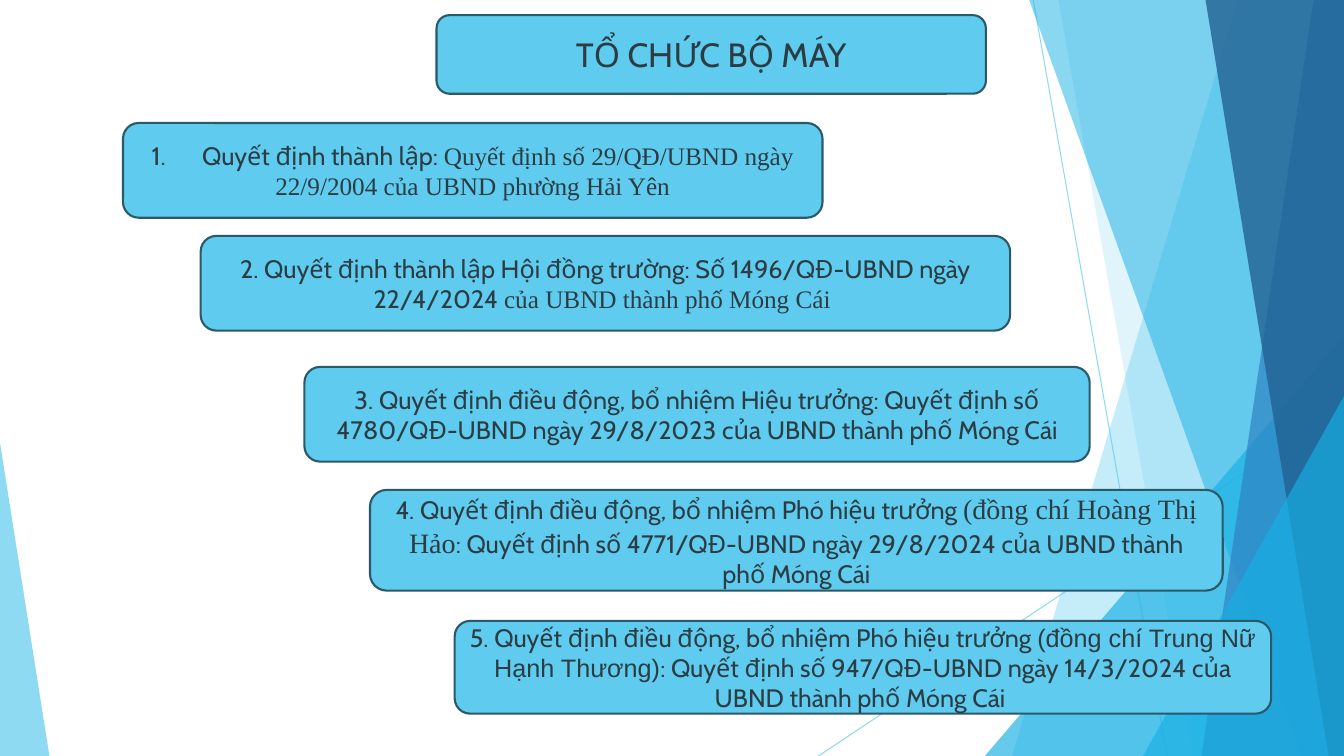
from dataclasses import dataclass
from typing import Any, Optional, Union

from lxml import etree
from pptx import Presentation
from pptx.dml.color import RGBColor
from pptx.enum.shapes import MSO_CONNECTOR, MSO_SHAPE
from pptx.enum.text import MSO_ANCHOR, PP_ALIGN
from pptx.oxml.ns import qn
from pptx.util import Emu, Inches, Pt

STRAIGHT = MSO_CONNECTOR.STRAIGHT
TRIANGLE = MSO_SHAPE.ISOSCELES_TRIANGLE
ROUNDED = MSO_SHAPE.ROUNDED_RECTANGLE
MIDDLE = MSO_ANCHOR.MIDDLE
CENTER = PP_ALIGN.CENTER

WIDTH, HEIGHT = Inches(13.333), Inches(7.5)
TAB_SHARE = 3.75
COLORS = {
    "sky": "5FCBEF",
    "cyan": "17B0E4",
    "blue": "2E83C3",
    "navy": "226292",
    "border": "2A5969",
    "text": "2C3C43",
}
BODY, SERIF, SANS = "Cabin", "Times New Roman", "Arial"
FRAME_FORMAT = {"word_wrap": True, "vertical_anchor": MIDDLE}


@dataclass(frozen=True)
class Ray:
    x1: float
    y1: float
    x2: float
    y2: float


@dataclass(frozen=True)
class Pane:
    top_left: float
    bottom_left: float
    color: str
    opacity: int


@dataclass(frozen=True)
class Wedge:
    left: float
    top: float
    right: float
    peak: float
    color: str
    opacity: int


@dataclass(frozen=True)
class Phrase:
    text: str
    font: str = BODY
    size: int = 18


@dataclass(frozen=True)
class Decision:
    left: float
    top: float
    width: float
    height: float
    phrases: tuple[Phrase, ...]


RAYS = [Ray(76.88, 0, 86.85, 100), Ray(100, 53.73, 60.9, 100)]

FACETS: list[Union[Pane, Wedge]] = [
    Pane(92.1, 75.3, "sky", 36),
    Pane(78.75, 88.73, "sky", 20),
    Wedge(73.28, 44.4, 100, 1, "cyan", 66),
    Pane(76.58, 96.83, "cyan", 50),
    Pane(97.73, 89.4, "blue", 70),
    Pane(89.7, 98.85, "navy", 80),
    Wedge(85.05, 52.4, 100, 1, "cyan", 66),
    Wedge(0, 58.53, 3.68, 0, "sky", 70),
]

DECISIONS = [
    Decision(32.48, 2, 40.88, 10.4, (Phrase("TỔ CHỨC BỘ MÁY", size=24),)),
    Decision(9.15, 16.27, 52.05, 12.53, (
        Phrase("1. \tQuyết định thành lập: "),
        Phrase("Quyết định số 29/QĐ/UBND ngày 22/9/2004 của UBND phường Hải Yên", SERIF),
    )),
    Decision(14.93, 31.2, 60.23, 12.53, (
        Phrase("2. Quyết định thành lập Hội đồng trường: Số 1496/QĐ-UBND ngày 22/4/2024 "),
        Phrase("của UBND thành phố Móng Cái ", SERIF),
    )),
    Decision(22.65, 48.53, 58.43, 12.53, (
        Phrase("3. Quyết định điều động, bổ nhiệm Hiệu trưởng: Quyết định số "
               "4780/QĐ-UBND ngày 29/8/2023 của UBND thành phố Móng Cái"),
    )),
    Decision(27.53, 64.8, 63.45, 13.33, (
        Phrase("4. Quyết định điều động, bổ nhiệm Phó hiệu trưởng "),
        Phrase("(đồng chí Hoàng Thị Hảo", SERIF, 20),
        Phrase(": Quyết định số 4771/QĐ-UBND ngày 29/8/2024 của UBND thành phố Móng Cái"),
    )),
    Decision(33.83, 82.13, 60.75, 12.27, (
        Phrase("5. Quyết định điều động, bổ nhiệm Phó hiệu trưởng "),
        Phrase("(đồng chí Trung Nữ Hạnh Thương)", SANS),
        Phrase(": Quyết định số 947/QĐ-UBND ngày 14/3/2024 của UBND thành phố Móng Cái "),
    )),
]


def across(share: float) -> Emu:
    return Emu(round(WIDTH * share / 100))


def down(share: float) -> Emu:
    return Emu(round(HEIGHT * share / 100))


def rgb(color: str) -> RGBColor:
    return RGBColor.from_string(COLORS[color])


def apply(target: Any, values: dict[str, Any]) -> None:
    for key, value in values.items():
        setattr(target, key, value)


def paint(fill: Any, color: str, opacity: Optional[int] = None) -> None:
    fill.solid()
    fill.fore_color.rgb = rgb(color)
    if opacity is not None:
        for tint in fill._xPr.iter(qn("a:srgbClr")):
            etree.SubElement(tint, qn("a:alpha")).set("val", str(opacity * 1000))


def draw_ray(shapes: Any, ray: Ray) -> None:
    line = shapes.add_connector(
        STRAIGHT, across(ray.x1), down(ray.y1), across(ray.x2), down(ray.y2))
    line.line.width = Pt(0.75)
    paint(line.line.fill, "sky", 70)
    etree.SubElement(line._element.spPr, qn("a:effectLst"))


def draw_facet(shapes: Any, facet: Union[Pane, Wedge]) -> None:
    if isinstance(facet, Pane):
        outline = shapes.build_freeform(across(facet.top_left), 0)
        outline.add_line_segments(
            [(WIDTH, 0), (WIDTH, HEIGHT), (across(facet.bottom_left), HEIGHT)])
        shard = outline.convert_to_shape()
    else:
        shard = shapes.add_shape(
            TRIANGLE, across(facet.left), down(facet.top),
            across(facet.right - facet.left), down(100 - facet.top))
        shard.adjustments[0] = facet.peak
    paint(shard.fill, facet.color, facet.opacity)
    shard.line.fill.background()
    shard.shadow.inherit = False


def draw_decision(shapes: Any, decision: Decision) -> None:
    card = shapes.add_shape(
        ROUNDED, across(decision.left), down(decision.top),
        across(decision.width), down(decision.height))
    paint(card.fill, "sky")
    paint(card.line.fill, "border")
    card.line.width = Pt(1.5)
    card.shadow.inherit = False
    apply(card.text_frame, FRAME_FORMAT)
    paragraph = card.text_frame.paragraphs[0]
    paragraph.alignment = CENTER
    tabs = etree.SubElement(paragraph._p.get_or_add_pPr(), qn("a:tabLst"))
    stop = etree.SubElement(tabs, qn("a:tab"))
    stop.set("pos", str(int(across(TAB_SHARE))))
    stop.set("algn", "l")
    for phrase in decision.phrases:
        run = paragraph.add_run()
        run.text = phrase.text
        apply(run.font, {"name": phrase.font, "size": Pt(phrase.size)})
        run.font.color.rgb = rgb("text")


def main() -> None:
    deck = Presentation()
    apply(deck, {"slide_width": WIDTH, "slide_height": HEIGHT})
    shapes = deck.slides.add_slide(deck.slide_layouts[6]).shapes
    for ray in RAYS:
        draw_ray(shapes, ray)
    for facet in FACETS:
        draw_facet(shapes, facet)
    for decision in DECISIONS:
        draw_decision(shapes, decision)
    deck.save("out.pptx")


if __name__ == "__main__":
    main()
